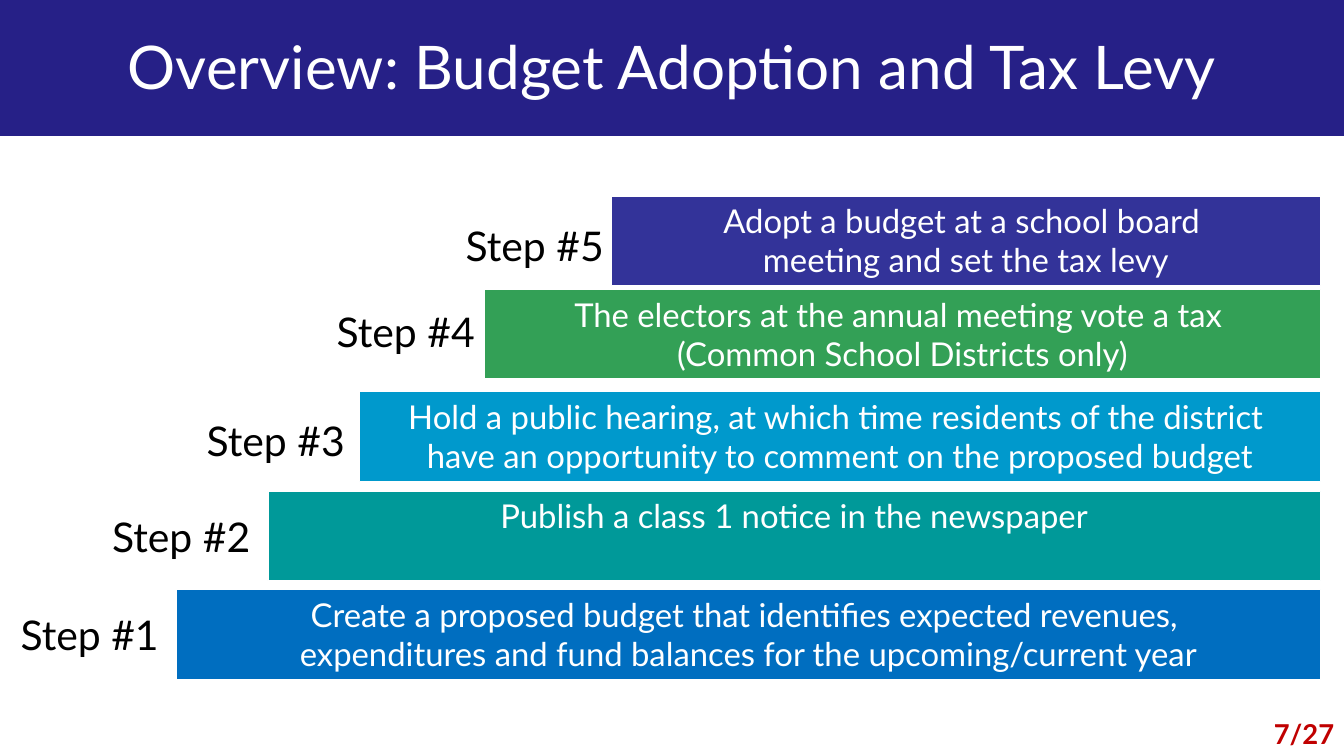
from lxml import etree
from pptx import Presentation
from pptx import util as u
from pptx.dml.color import RGBColor
from pptx.enum import shapes, text
from pptx.oxml import parse_xml

FONT = "Lato"
COLORS = {
    "band": "262087", "white": "FFFFFF", "black": "000000", "page": "C00000",
    "blue": "006EC0", "teal": "009999", "sky": "0099CC",
    "green": "33A056", "indigo": "333399",
}
DRAWING = "http://schemas.openxmlformats.org/drawingml/2006/main"
TEXT_SHADOW = f"""<a:effectLst xmlns:a="{DRAWING}">
  <a:outerShdw blurRad="38100" dist="38100" dir="2700000" algn="tl">
    <a:srgbClr val="000000"><a:alpha val="43000"/></a:srgbClr>
  </a:outerShdw>
</a:effectLst>"""


def color(name):
    return RGBColor.from_string(COLORS[name])


def write(shape, *lines, size, fill="white", bold=False,
          align=text.PP_ALIGN.CENTER, anchor=text.MSO_ANCHOR.TOP):
    """Write the lines as one paragraph and return its runs."""
    frame = shape.text_frame
    frame.word_wrap = True
    frame.auto_size = text.MSO_AUTO_SIZE.NONE
    frame.vertical_anchor = anchor
    paragraph = frame.paragraphs[0]
    paragraph.alignment = align
    for number, line in enumerate(lines):
        if number:
            paragraph.add_line_break()
        run = paragraph.add_run()
        run.text = line
        run.font.size = u.Pt(size)
        run.font.bold = bold
        run.font.color.rgb = color(fill)
        run.font.name = FONT
    return paragraph.runs


class StepSlide:
    BAR_RIGHT = 13.41
    BAR_HEIGHT = 0.91

    def __init__(self, presentation):
        self.slide = presentation.slides.add_slide(presentation.slide_layouts[5])

    def rectangle(self, left, top, width, height, fill, outline=None):
        shape = self.slide.shapes.add_shape(
            shapes.MSO_SHAPE.RECTANGLE,
            u.Inches(left), u.Inches(top), u.Inches(width), u.Inches(height))
        shape.shadow.inherit = False
        shape.fill.solid()
        shape.fill.fore_color.rgb = color(fill)
        if outline:
            shape.line.color.rgb = color(outline)
            shape.line.width = u.Pt(1)
        else:
            shape.line.fill.background()
        return shape

    def label(self, words, left, top, width, height, **style):
        box = self.slide.shapes.add_textbox(
            u.Inches(left), u.Inches(top), u.Inches(width), u.Inches(height))
        write(box, words, **style)

    def title(self, words):
        title = self.slide.shapes.title
        title.left, title.top = u.Inches(0), u.Inches(0)
        title.width, title.height = u.Inches(13.65), u.Inches(1.33)
        run = write(title, words, size=44, anchor=text.MSO_ANCHOR.MIDDLE)[0]
        solid_fill = run.font.fill and run.font.element.find(f"{{{DRAWING}}}solidFill") \
            if hasattr(run.font, "element") else next(title.element.iter(f"{{{DRAWING}}}solidFill"))
        solid_fill.addnext(parse_xml(TEXT_SHADOW))
        # The band lies behind the title
        band = self.rectangle(-0.01, 0, 13.66, 1.38, "band")
        title.element.addprevious(band.element)

    def step(self, number, lines, fill, bar_left, bar_top, label_left, label_top):
        bar = self.rectangle(bar_left, bar_top, self.BAR_RIGHT - bar_left,
                             self.BAR_HEIGHT, fill, outline="white")
        write(bar, *lines, size=24)
        self.label(f"Step #{number}", label_left, label_top, 1.68, 0.61,
                   size=29.9, fill="black", align=text.PP_ALIGN.LEFT)


# Steps from the bottom up: lines, fill, bar left and top, label left and top
STEPS = [
    (("Create a proposed budget that identifies expected revenues, ",
      "expenditures and fund balances for the upcoming/current year"),
     "blue", 1.79, 5.99, 0.11, 6.14),
    (("Publish a class 1 notice in the newspaper",),
     "teal", 2.72, 4.99, 1.04, 5.15),
    (("Hold a public hearing, at which time residents of the district ",
      "have an opportunity to comment on the proposed budget"),
     "sky", 3.65, 3.98, 2, 4.17),
    (("The electors at the annual meeting vote a tax ",
      "(Common School Districts only)"),
     "green", 4.92, 2.94, 3.32, 3.07),
    (("Adopt a budget at a school board ",
      "meeting and set the tax levy"),
     "indigo", 6.21, 1.99, 4.63, 2.19),
]


def main():
    presentation = Presentation()
    presentation.slide_width = u.Inches(13.65)
    presentation.slide_height = u.Inches(7.68)
    page = StepSlide(presentation)

    # Header
    page.title("Overview: Budget Adoption and Tax Levy")

    # Staircase of steps
    for number, step in enumerate(STEPS, start=1):
        page.step(number, *step)

    # Page number
    page.label("7/27", 12.66, 7.24, 0.99, 0.44, size=20, fill="page",
               bold=True, align=text.PP_ALIGN.RIGHT)

    presentation.save("out.pptx")


if __name__ == "__main__":
    main()
